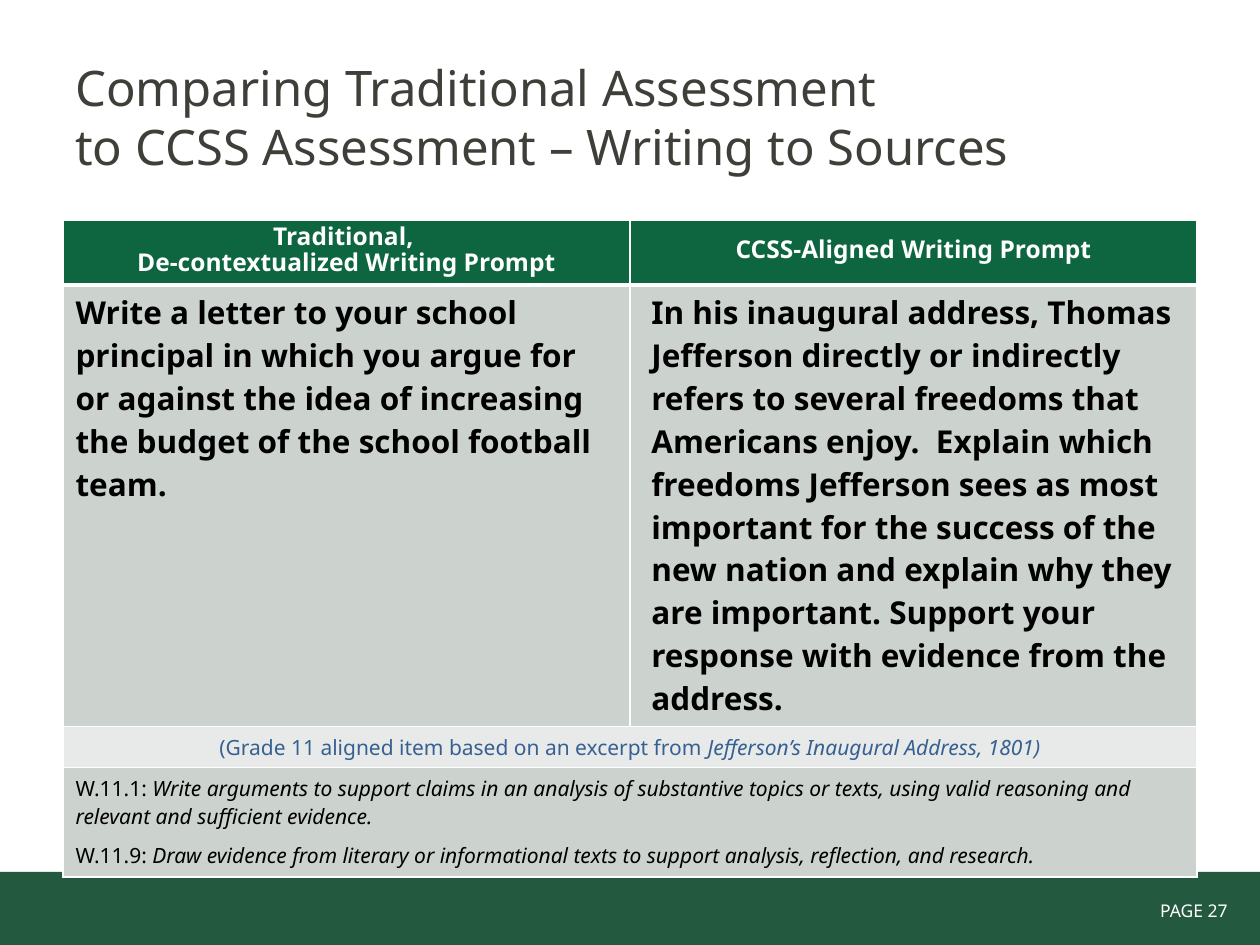
from lxml.etree import SubElement
from pptx import Presentation
from pptx.dml.color import RGBColor
from pptx.enum.shapes import MSO_SHAPE
from pptx.enum.text import MSO_ANCHOR, PP_ALIGN
from pptx.oxml.ns import qn
from pptx.util import Pt

FONT = "Noto Sans"
COLORS = {
    "white": "FFFFFF",
    "footer": "23593E",
    "title": "3F3F39",
    "header": "0E6641",
    "band": "CCD3CF",
    "light": "E7EAE9",
    "black": "000000",
    "blue": "376092",
}
# Height, fill and bottom border of each table row
ROW_STYLES = [(36.75, "header", 3), (252.25, "band", 1), (23.5, "light", 1), (62.75, "band", 1)]


def color(name):
    return RGBColor.from_string(COLORS[name])


def add_spans(para, spans, size, ink, bold=False):
    """Fill a paragraph with (text, italic) spans."""
    for text, italic in spans:
        span = para.add_run()
        span.text = text
        font = span.font
        font.name, font.size = FONT, Pt(size)
        font.bold, font.italic = bold, italic
        font.color.rgb = color(ink)


def add_text(page, left, top, width, height, text, size, ink, align=PP_ALIGN.LEFT):
    box = page.shapes.add_textbox(Pt(left), Pt(top), Pt(width), Pt(height))
    frame = box.text_frame
    frame.word_wrap = True
    frame.vertical_anchor = MSO_ANCHOR.MIDDLE
    frame.text = text
    para = frame.paragraphs[0]
    para.alignment = align
    for span in para.runs:
        span.font.name, span.font.size = FONT, Pt(size)
        span.font.color.rgb = color(ink)


def add_footer(page, left, top, width, height):
    bar = page.shapes.add_shape(MSO_SHAPE.RECTANGLE, Pt(left), Pt(top), Pt(width), Pt(height))
    bar.shadow.inherit = False
    bar.fill.solid()
    bar.fill.fore_color.rgb = color("footer")
    bar.line.fill.background()
    add_text(page, left + width - 126, top + 12, 114, 20,
             "PAGE 27", 10, "white", PP_ALIGN.RIGHT)


def style_cell(cell, fill, bottom):
    """White borders on all sides, then a solid fill."""
    properties = cell._tc.get_or_add_tcPr()
    for side, weight in (("L", 1), ("R", 1), ("T", 1), ("B", bottom)):
        line = SubElement(properties, qn(f"a:ln{side}"), w=str(Pt(weight)))
        paint = SubElement(line, qn("a:solidFill"))
        SubElement(paint, qn("a:srgbClr"), val=COLORS["white"])
    cell.fill.solid()
    cell.fill.fore_color.rgb = color(fill)


def fill_cell(cell, paragraphs, size, ink, bold=False, align=PP_ALIGN.LEFT,
              spacing=None, gap=0):
    frame = cell.text_frame
    for index, spans in enumerate(paragraphs):
        para = frame.add_paragraph() if index else frame.paragraphs[0]
        para.alignment = align
        if spacing:
            para.line_spacing = Pt(spacing)
        if index and gap:
            para.space_before = Pt(gap)
        add_spans(para, spans, size, ink, bold)


def add_comparison(page, left, top, width):
    height = sum(row_height for row_height, _, _ in ROW_STYLES)
    table = page.shapes.add_table(len(ROW_STYLES), 2, Pt(left), Pt(top),
                                  Pt(width), Pt(height)).table
    for column in table.columns:
        column.width = Pt(width / 2)
    for row, (row_height, fill, bottom) in zip(table.rows, ROW_STYLES):
        row.height = Pt(row_height)
        for cell in row.cells:
            style_cell(cell, fill, bottom)

    # Header row
    headings = [["Traditional, ", "De-contextualized Writing Prompt"],
                ["CCSS-Aligned Writing Prompt"]]
    for column, lines in enumerate(headings):
        fill_cell(table.cell(0, column), [[(line, False)] for line in lines],
                  14, "white", True, PP_ALIGN.CENTER, spacing=14.8)
    table.cell(0, 1).vertical_anchor = MSO_ANCHOR.MIDDLE

    # The two prompts
    prompts = [
        "Write a letter to your school principal in which you argue for or against "
        "the idea of increasing the budget of the school football team.",
        "In his inaugural address, Thomas Jefferson directly or indirectly refers to "
        "several freedoms that Americans enjoy.  Explain which freedoms Jefferson sees "
        "as most important for the success of the new nation and explain why they are "
        "important. Support your response with evidence from the address.",
    ]
    for column, prompt in enumerate(prompts):
        fill_cell(table.cell(1, column), [[(prompt, False)]], 18, "black", True)
    table.cell(1, 1).text_frame.paragraphs[0]._p.get_or_add_pPr().set("marL", str(Pt(5)))

    # Source note and standards, each across both columns
    for row in (2, 3):
        table.cell(row, 0).merge(table.cell(row, 1))
    fill_cell(table.cell(2, 0),
              [[("(Grade 11 aligned item based on an excerpt from ", False),
                ("Jefferson’s Inaugural Address, 1801)", True)]],
              12, "blue", align=PP_ALIGN.CENTER)
    standards = [
        ("W.11.1: ", "Write arguments to support claims in an analysis of substantive topics "
                     "or texts, using valid reasoning and relevant and sufficient evidence."),
        ("W.11.9: ", "Draw evidence from literary or informational texts to support "
                     "analysis, reflection, and research."),
    ]
    fill_cell(table.cell(3, 0), [[(code, False), (wording, True)] for code, wording in standards],
              12, "black", gap=6)


def main():
    deck = Presentation()
    deck.slide_width, deck.slide_height = Pt(720), Pt(540)
    page = deck.slides.add_slide(deck.slide_layouts[6])
    add_footer(page, 0, 498.25, 720.5, 42.5)
    add_text(page, 36, 21.6, 648, 90,
             "Comparing Traditional Assessment\vto CCSS Assessment – Writing to Sources",
             28, "title")
    add_comparison(page, 36, 126, 648)
    deck.save("out.pptx")


if __name__ == "__main__":
    main()
